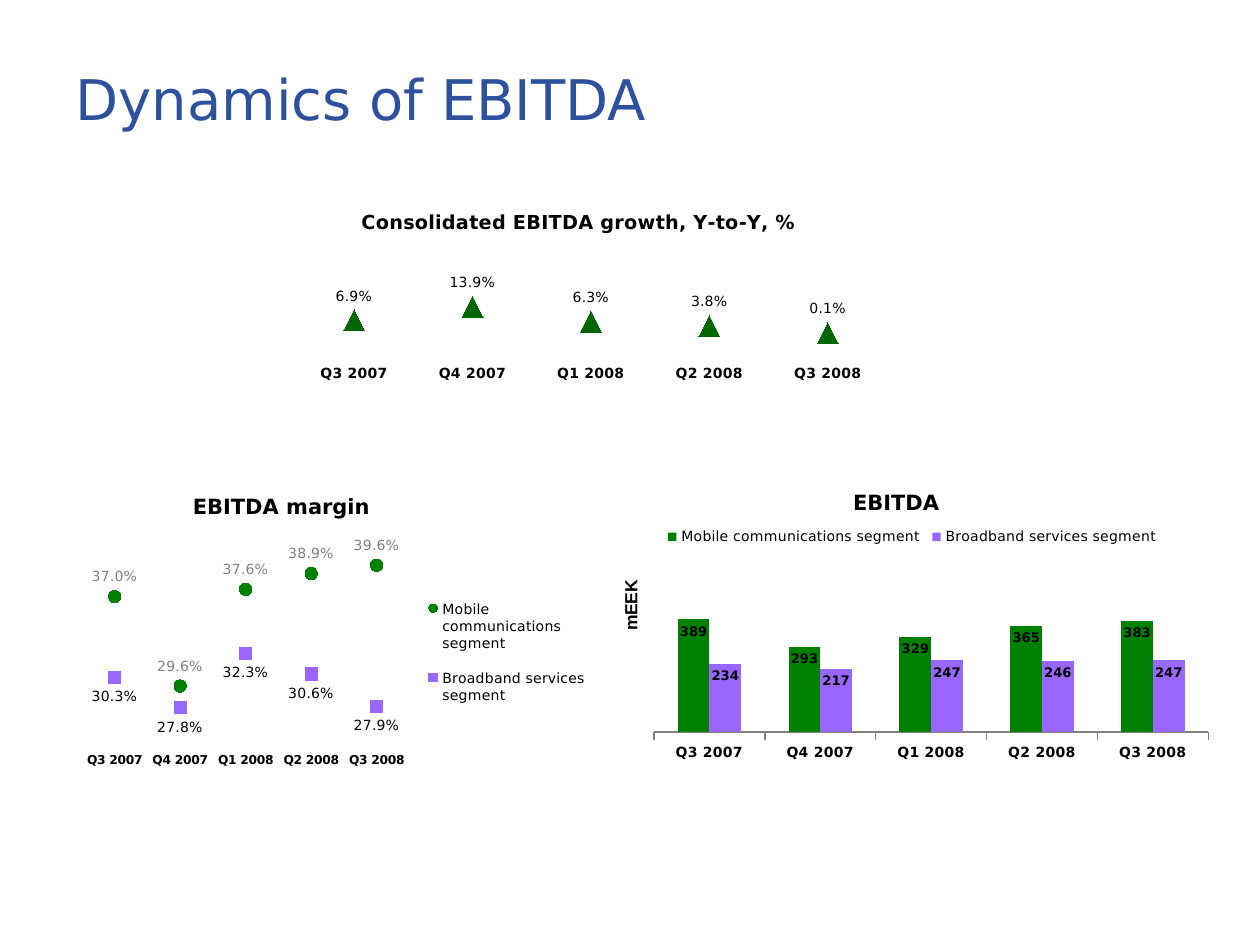
"""Build a slide with three charts on the dynamics of EBITDA."""
from lxml import etree
from pptx import Presentation
from pptx.chart.data import CategoryChartData
from pptx.dml.color import RGBColor
from pptx.enum.chart import (
    XL_CHART_TYPE, XL_LABEL_POSITION, XL_LEGEND_POSITION, XL_MARKER_STYLE,
    XL_TICK_LABEL_POSITION, XL_TICK_MARK)
from pptx.enum.text import MSO_ANCHOR, PP_ALIGN
from pptx.oxml.ns import qn
from pptx.util import Emu, Pt

STACKED = XL_CHART_TYPE.LINE_MARKERS_STACKED
MARKERS = XL_CHART_TYPE.LINE_MARKERS
COLUMNS = XL_CHART_TYPE.COLUMN_CLUSTERED
ABOVE, BELOW = XL_LABEL_POSITION.ABOVE, XL_LABEL_POSITION.BELOW
INSIDE_END = XL_LABEL_POSITION.INSIDE_END
LEGEND_RIGHT, LEGEND_CORNER = XL_LEGEND_POSITION.RIGHT, XL_LEGEND_POSITION.CORNER
TRIANGLE, CIRCLE, SQUARE = (
    XL_MARKER_STYLE.TRIANGLE, XL_MARKER_STYLE.CIRCLE, XL_MARKER_STYLE.SQUARE)
LOW = XL_TICK_LABEL_POSITION.LOW
OUTSIDE = XL_TICK_MARK.OUTSIDE
MIDDLE, LEFT = MSO_ANCHOR.MIDDLE, PP_ALIGN.LEFT

EMU_PER_PX = 914400 / 126
MAIN_FONT, BASE_FONT = "DejaVu Sans", "Arial"
COLORS = {"title": "2E519E", "text": "000000", "muted": "808080",
          "growth": "006600", "mobile": "008000", "broadband": "9966FF"}
QUARTERS = ["Q3 2007", "Q4 2007", "Q1 2008", "Q2 2008", "Q3 2008"]
MOBILE, BROADBAND = "Mobile communications segment", "Broadband services segment"


def px(length):
    """Turn whole pixels into EMU."""
    return Emu(round(length * EMU_PER_PX))


def color(name):
    """Return a named colour."""
    return RGBColor.from_string(COLORS[name])


def style(font, size, bold=False, tint="text", face=MAIN_FONT):
    """Set size, weight, colour and face of a font."""
    font.size, font.bold, font.name = Pt(size), bold, face
    font.color.rgb = color(tint)


def place(element, **fractions):
    """Give a chart part a manual layout in fractions of the chart."""
    layout = element.find(qn("c:layout"))
    if layout is None:
        layout = etree.Element(qn("c:layout"))
        overlay = element.find(qn("c:overlay"))
        element.insert(0 if overlay is None else element.index(overlay), layout)
    for child in list(layout):
        layout.remove(child)
    manual = etree.SubElement(layout, qn("c:manualLayout"))
    if element.tag == qn("c:plotArea"):
        etree.SubElement(manual, qn("c:layoutTarget")).set("val", "inner")
    for key in ("x", "y"):
        etree.SubElement(manual, qn(f"c:{key}Mode")).set("val", "edge")
    for key, value in fractions.items():
        etree.SubElement(manual, qn(f"c:{key}")).set("val", str(value))


def add_heading(owner, text, size, x, y, face=MAIN_FONT):
    """Title a chart or an axis at a fixed place."""
    title = owner.chart_title if hasattr(owner, "chart_title") else owner.axis_title
    span = title.text_frame.paragraphs[0].add_run()
    span.text = text
    style(span.font, size, True, face=face)
    place(title._element, x=x, y=y)


def add_chart(page, kind, frame, series, number_format):
    """Add a chart of the quarters and return it."""
    data = CategoryChartData(number_format=number_format)
    data.categories = QUARTERS
    for name, values in series:
        data.add_series(name, values)
    chart = page.shapes.add_chart(kind, *map(px, frame), data).chart
    style(chart.font, 10, face=BASE_FONT)
    chart.has_legend = False
    return chart


def format_axes(chart, size, low, high, lined=False):
    """Hide the value axis and format the quarter labels."""
    values, quarters = chart.value_axis, chart.category_axis
    values.minimum_scale, values.maximum_scale = low, high
    values.has_major_gridlines = False
    values.visible = False
    quarters.major_tick_mark = OUTSIDE
    quarters.tick_label_position = LOW
    style(quarters.tick_labels.font, size, True)
    if lined:
        quarters.format.line.color.rgb = color("muted")
    else:
        quarters.format.line.fill.background()


def add_labels(series, position, size, number_format, bold=False, tint="text"):
    """Show the values of a series."""
    labels = series.data_labels
    labels.show_value = True
    labels.number_format, labels.number_format_is_linked = number_format, False
    labels.position = position
    style(labels.font, size, bold, tint)


def format_markers(series, shape, size, tint):
    """Show a line series as markers only."""
    series.smooth = False
    series.format.line.fill.background()
    marker = series.marker
    marker.style, marker.size = shape, size
    marker.format.fill.solid()
    marker.format.fill.fore_color.rgb = color(tint)
    marker.format.line.fill.background()


def add_legend(chart, position, **fractions):
    """Add a legend at a fixed place."""
    chart.has_legend = True
    chart.legend.position = position
    chart.legend.include_in_layout = False
    style(chart.legend.font, 8)
    place(chart.legend._element, **fractions)


def place_plot(chart, x, y, w, h):
    """Fix the inner plot area of a chart."""
    place(chart._chartSpace.chart.plotArea, x=x, y=y, w=w, h=h)


def add_growth(page):
    """Add the chart of consolidated growth."""
    values = [0.069, 0.139, 0.063, 0.038, 0.001]
    chart = add_chart(page, STACKED, (276, 88, 630, 378), [("Series 1", values)], "0.0%")
    add_heading(chart, "Consolidated EBITDA growth, Y-to-Y, %", 11, 0.13, 0.31)
    format_axes(chart, 8, -0.1, 1.2)
    place_plot(chart, 0.03, 0.05, 0.94, 0.65)
    series = chart.plots[0].series[0]
    format_markers(series, TRIANGLE, 12, "growth")
    add_labels(series, ABOVE, 8, "0.0%")


def add_margin(page):
    """Add the chart of margins by segment."""
    series = [(MOBILE, [0.37, 0.296, 0.376, 0.389, 0.396]),
              (BROADBAND, [0.303, 0.278, 0.323, 0.306, 0.279])]
    chart = add_chart(page, MARKERS, (0, 413, 630, 378), series, "0.0%")
    add_heading(chart, "EBITDA margin", 12, 0.3, 0.2)
    format_axes(chart, 7, 0.25, 0.5)
    place_plot(chart, 0.13, 0.07, 0.52, 0.8)
    add_legend(chart, LEGEND_RIGHT, x=0.68, y=0.45, w=0.25, h=0.37)
    looks = [(CIRCLE, "mobile", ABOVE, "muted"), (SQUARE, "broadband", BELOW, "text")]
    for line, (shape, tint, position, label_tint) in zip(chart.plots[0].series, looks):
        format_markers(line, shape, 7, tint)
        add_labels(line, position, 8, "0.0%", tint=label_tint)


def add_ebitda(page):
    """Add the chart of EBITDA by segment."""
    series = [(MOBILE, [389, 293, 329, 365, 383]),
              (BROADBAND, [234, 217, 247, 246, 247])]
    chart = add_chart(page, COLUMNS, (591, 384, 630, 387), series, "0")
    add_heading(chart, "EBITDA", 12, 0.41, 0.26)
    add_heading(chart.value_axis, "mEEK", 10, 0.04, 0.5, BASE_FONT)
    format_axes(chart, 8, 0, 1000, lined=True)
    place_plot(chart, 0.1, 0.15, 0.88, 0.75)
    add_legend(chart, LEGEND_CORNER, x=0.11, y=0.37, w=0.8, h=0.05)
    plot = chart.plots[0]
    plot.gap_width, plot.overlap, plot.vary_by_categories = 150, 0, False
    for columns, tint in zip(plot.series, ("mobile", "broadband")):
        columns.format.fill.solid()
        columns.format.fill.fore_color.rgb = color(tint)
        add_labels(columns, INSIDE_END, 7.5, "0", True)


def add_title(page):
    """Fill and format the title placeholder."""
    box = page.shapes.title
    box.left, box.top, box.width, box.height = map(px, (63, 38, 855, 120))
    box.text_frame.vertical_anchor = MIDDLE
    para = box.text_frame.paragraphs[0]
    para.alignment = LEFT
    span = para.add_run()
    span.text = "Dynamics of EBITDA"
    style(span.font, 32, tint="title")


def main():
    """Build and save the deck."""
    deck = Presentation()
    deck.slide_width, deck.slide_height = px(1260), px(945)
    page = deck.slides.add_slide(deck.slide_layouts[5])
    add_title(page)
    add_growth(page)
    add_margin(page)
    add_ebitda(page)
    deck.save("out.pptx")


if __name__ == "__main__":
    main()
